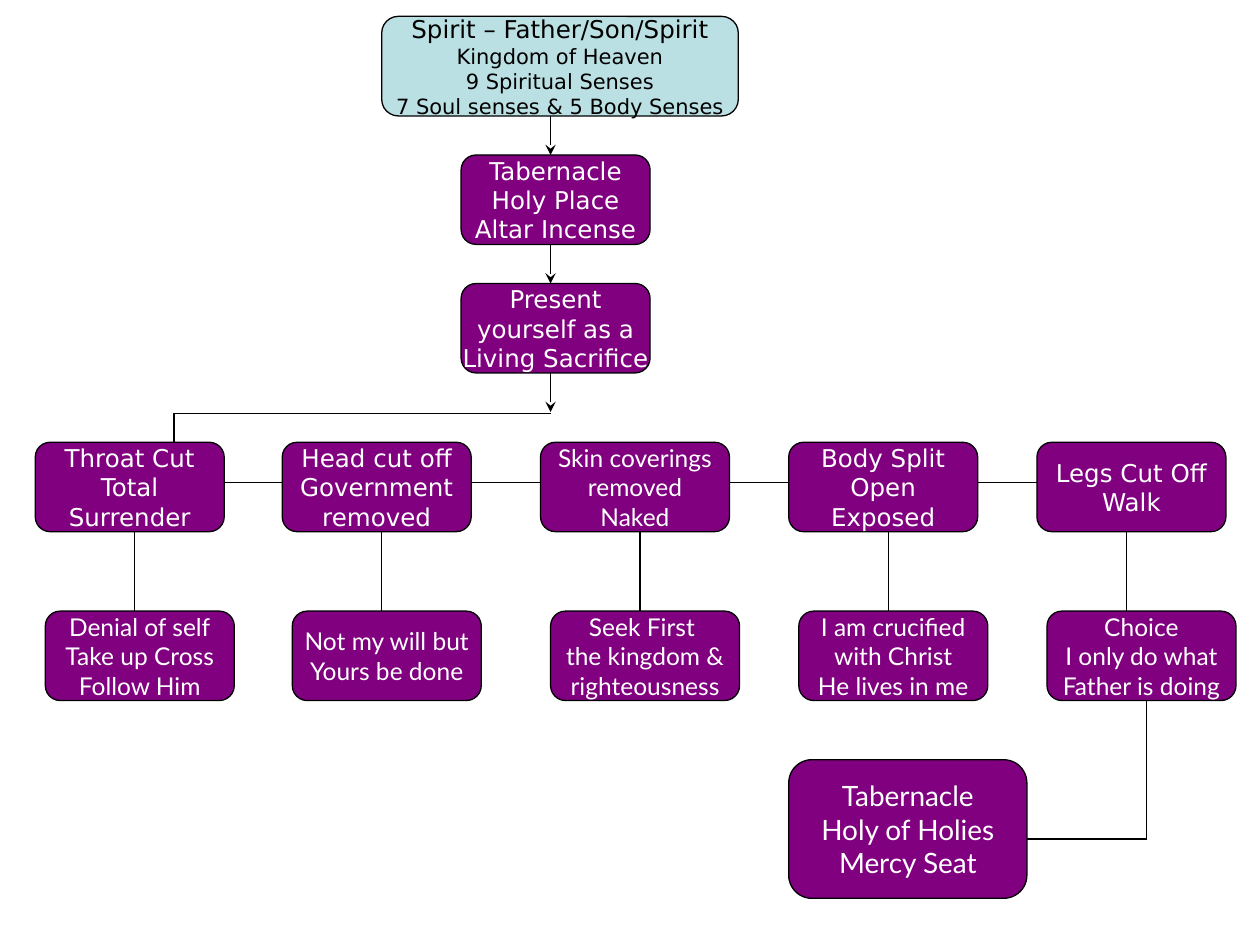
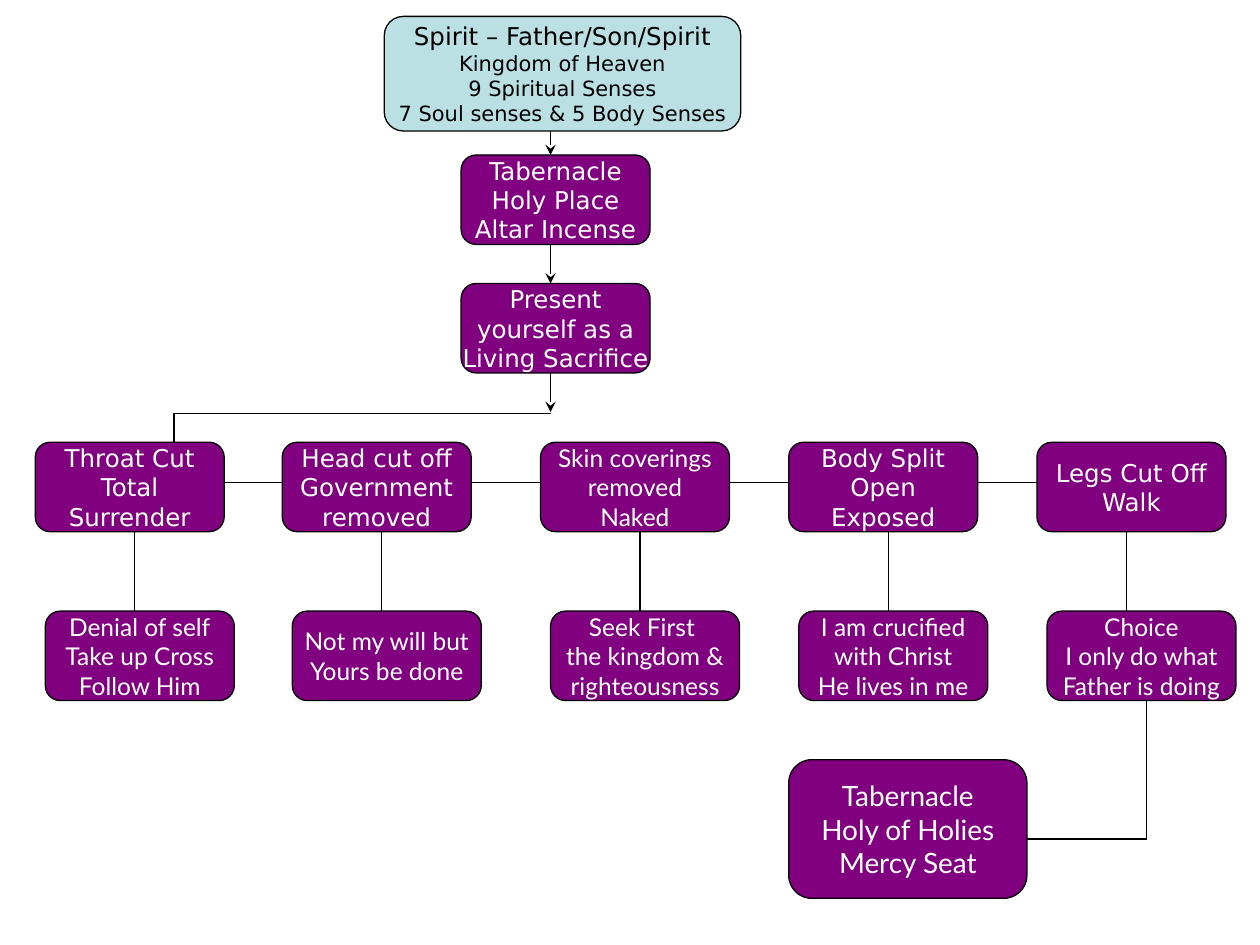
"""Build two flowchart slides that lead from Spirit to the Mercy Seat."""
from dataclasses import dataclass

from lxml import etree
from pptx import Presentation
from pptx import util as u
from pptx.dml import color
from pptx.enum import shapes, text
from pptx.oxml import ns


@dataclass(frozen=True)
class Theme:
    spirit: str = "BBE0E3"
    step: str = "800080"
    dark: str = "000000"
    light: str = "FFFFFF"
    sans: str = "DejaVu Sans"
    lato: str = "Lato"
    small: int = 12
    body: int = 14
    large: int = 16
    line: float = 0.75


THEME = Theme()

SPIRIT_TEXT = [
    ("Spirit – Father/Son/Spirit", THEME.body),
    ("Kingdom of Heaven", THEME.small),
    ("9 Spiritual Senses\n7 Soul senses & 5 Body Senses", THEME.small),
]
SPIRIT_BOXES = [(3.03, 0.13, 2.83, 0.79), (3.05, 0.13, 2.83, 0.91)]

TRUNK = [
    "Tabernacle\nHoly Place\nAltar Incense",
    "Present\nyourself as a\nLiving Sacrifice",
]

COLUMNS = [
    (0.28, "Throat Cut\nTotal\nSurrender", THEME.sans,
     "Denial of self\nTake up Cross\nFollow Him"),
    (2.24, "Head cut off\nGovernment\nremoved", THEME.sans,
     "Not my will but\nYours be done"),
    (4.29, "Skin coverings\nremoved\nNaked", THEME.lato,
     "Seek First \nthe kingdom &\nrighteousness"),
    (6.26, "Body Split\nOpen\nExposed", THEME.sans,
     "I am crucified\nwith Christ\nHe lives in me"),
    (8.23, "Legs Cut Off\nWalk", THEME.sans,
     "Choice\nI only do what\nFather is doing"),
]

MERCY_TEXT = "Tabernacle\nHoly of Holies\nMercy Seat"
MERCY_BOX = (6.26, 6.03, 1.89, 1.1)

BOX_WIDTH, BOX_HEIGHT = 1.5, 0.71
TRUNK_LEFT, TRUNK_TOP, TRUNK_PITCH = 3.66, 1.23, 1.02
TRUNK_AXIS, ARROW_LENGTH = 4.37, 0.32
SACRIFICE_TOP, MEANING_TOP, MEANING_SHIFT = 3.51, 4.85, 0.08
BRANCH_X, BRANCH_Y, CHAIN_Y = 1.38, 3.28, 3.83
DROP_OFFSET, LAST_DROP_OFFSET = 0.79, 0.71
RETURN_X, RETURN_Y = 9.1, 6.66


def rgb(value):
    return color.RGBColor.from_string(value)


def add_box(slide, box, paragraphs, font, fill=THEME.step, ink=THEME.light):
    shape = slide.shapes.add_shape(
        shapes.MSO_SHAPE.FLOWCHART_ALTERNATE_PROCESS, *map(u.Inches, box))
    shape.shadow.inherit = False
    shape.fill.solid()
    shape.fill.fore_color.rgb = rgb(fill)
    shape.line.color.rgb = rgb(THEME.dark)
    shape.line.width = u.Pt(THEME.line)
    frame = shape.text_frame
    frame.word_wrap = False
    frame.vertical_anchor = text.MSO_ANCHOR.MIDDLE
    frame.margin_left = frame.margin_right = 0
    frame.margin_top = frame.margin_bottom = 0
    for index, (words, size) in enumerate(paragraphs):
        paragraph = frame.add_paragraph() if index else frame.paragraphs[0]
        paragraph.alignment = text.PP_ALIGN.CENTER
        for row, words_in_row in enumerate(words.split("\n")):
            if row:
                paragraph.add_line_break()
            run = paragraph.add_run()
            run.text = words_in_row
            run.font.name = font
            run.font.size = u.Pt(size)
            run.font.color.rgb = rgb(ink)


def add_step(slide, left, top, words, font):
    add_box(slide, (left, top, BOX_WIDTH, BOX_HEIGHT),
            [(words, THEME.body)], font)


def add_line(slide, start, end, arrow=False):
    connector = slide.shapes.add_connector(
        shapes.MSO_CONNECTOR.STRAIGHT, *map(u.Inches, start + end))
    connector.line.color.rgb = rgb(THEME.dark)
    connector.line.width = u.Pt(THEME.line)
    properties = connector.element.spPr
    if arrow:
        outline = properties.find(ns.qn("a:ln"))
        etree.SubElement(outline, ns.qn("a:tailEnd"), type="stealth")
    etree.SubElement(properties, ns.qn("a:effectLst"))


def add_lines(slide):
    for index in range(len(TRUNK) + 1):
        tip = TRUNK_TOP + index * TRUNK_PITCH
        add_line(slide, (TRUNK_AXIS, tip - ARROW_LENGTH), (TRUNK_AXIS, tip),
                 arrow=True)
    add_line(slide, (BRANCH_X, SACRIFICE_TOP), (BRANCH_X, BRANCH_Y))
    add_line(slide, (BRANCH_X, BRANCH_Y), (TRUNK_AXIS, BRANCH_Y))

    lefts = [column[0] for column in COLUMNS]
    for left, next_left in zip(lefts, lefts[1:]):
        add_line(slide, (left + BOX_WIDTH, CHAIN_Y), (next_left, CHAIN_Y))
    for left in lefts:
        x = left + (LAST_DROP_OFFSET if left == lefts[-1] else DROP_OFFSET)
        add_line(slide, (x, SACRIFICE_TOP + BOX_HEIGHT), (x, MEANING_TOP))

    add_line(slide, (RETURN_X, MEANING_TOP + BOX_HEIGHT), (RETURN_X, RETURN_Y))
    add_line(slide, (RETURN_X, RETURN_Y),
             (MERCY_BOX[0] + MERCY_BOX[2], RETURN_Y))


def add_flowchart(slide, spirit_box):
    add_lines(slide)
    add_box(slide, spirit_box, SPIRIT_TEXT, THEME.sans,
            THEME.spirit, THEME.dark)
    for index, words in enumerate(TRUNK):
        add_step(slide, TRUNK_LEFT, TRUNK_TOP + index * TRUNK_PITCH,
                 words, THEME.sans)
    for left, sacrifice, font, meaning in COLUMNS:
        add_step(slide, left, SACRIFICE_TOP, sacrifice, font)
        add_step(slide, left + MEANING_SHIFT, MEANING_TOP,
                 meaning, THEME.lato)
    add_box(slide, MERCY_BOX, [(MERCY_TEXT, THEME.large)], THEME.lato)


def main():
    presentation = Presentation()
    presentation.slide_width = u.Inches(10)
    presentation.slide_height = u.Inches(7.5)
    for spirit_box in SPIRIT_BOXES:
        slide = presentation.slides.add_slide(presentation.slide_layouts[6])
        add_flowchart(slide, spirit_box)
    presentation.save("out.pptx")


if __name__ == "__main__":
    main()
